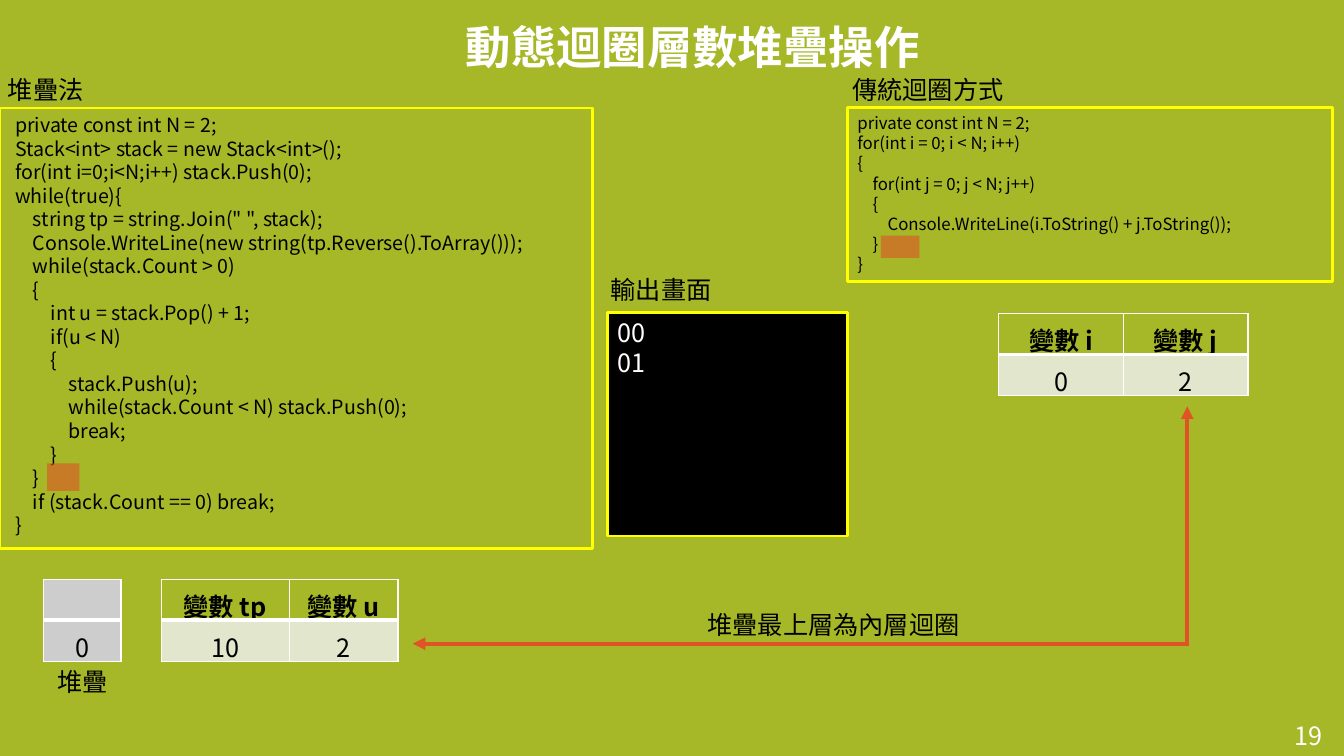
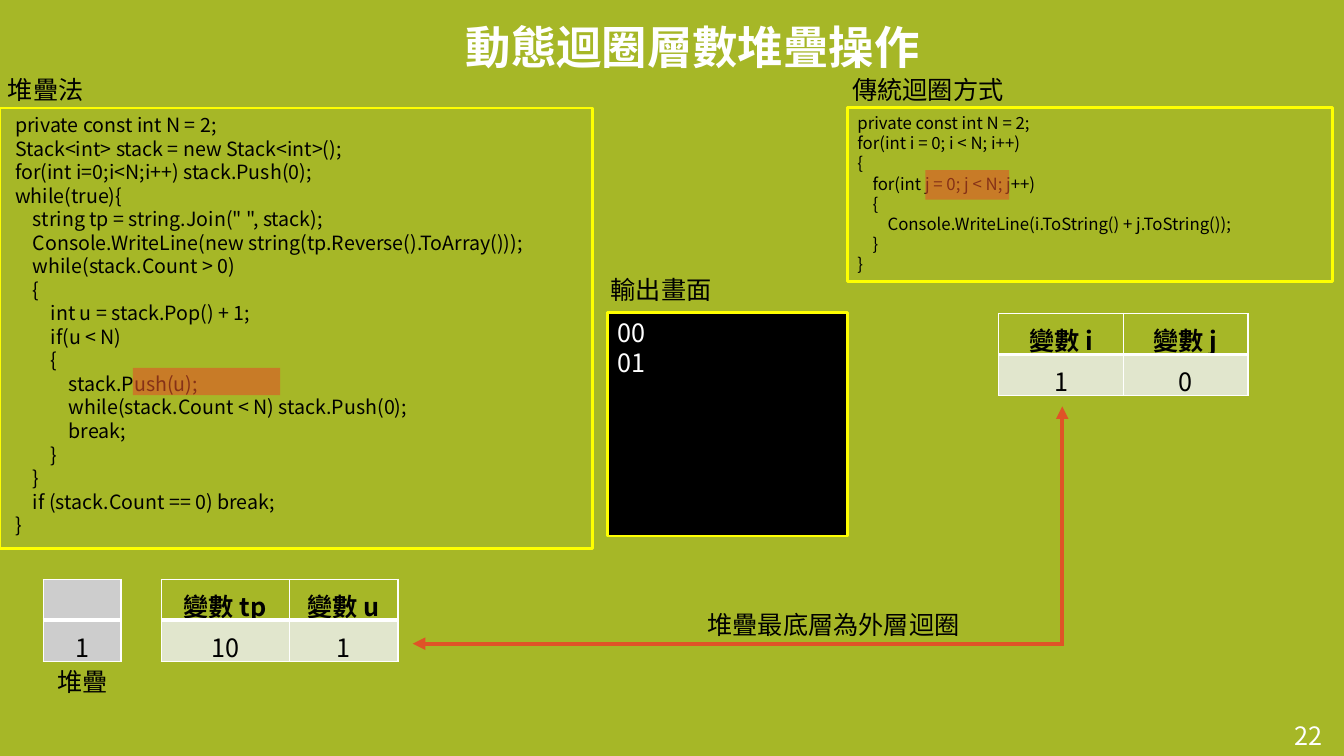
from lxml import etree
from pptx import Presentation
from pptx.dml.color import RGBColor
from pptx.enum.shapes import MSO_CONNECTOR, MSO_SHAPE
from pptx.enum.text import MSO_ANCHOR, MSO_AUTO_SIZE, PP_ALIGN
from pptx.oxml.ns import qn
from pptx.util import Cm, Pt

RECT = MSO_SHAPE.RECTANGLE
STRAIGHT = MSO_CONNECTOR.STRAIGHT
LEFT, CENTER, RIGHT = PP_ALIGN.LEFT, PP_ALIGN.CENTER, PP_ALIGN.RIGHT
TOP, MIDDLE, BOTTOM = MSO_ANCHOR.TOP, MSO_ANCHOR.MIDDLE, MSO_ANCHOR.BOTTOM
NO_AUTOFIT = MSO_AUTO_SIZE.NONE

STACK_CODE = """private const int N = 2;
Stack<int> stack = new Stack<int>();
for(int i=0;i<N;i++) stack.Push(0);
while(true){
    string tp = string.Join(" ", stack);
    Console.WriteLine(new string(tp.Reverse().ToArray()));
    while(stack.Count > 0)
    {
        int u = stack.Pop() + 1;
        if(u < N)
        {
            stack.Push(u);
            while(stack.Count < N) stack.Push(0);
            break;
        }
    }
    if (stack.Count == 0) break;
}"""

LOOP_CODE = """private const int N = 2;
for(int i = 0; i < N; i++)
{
    for(int j = 0; j < N; j++)
    {
        Console.WriteLine(i.ToString() + j.ToString());
    }
}"""

STEPS = [
    dict(number="19", stack="0", i="0", j="2", tp="10", u="2",
         note="堆疊最上層為內層迴圈", corner=29.92,
         marks=[(1.19, 11.68, 0.81, 0.69), (22.2, 5.94, 0.97, 0.56)]),
    dict(number="22", stack="1", i="1", j="0", tp="10", u="1",
         note="堆疊最底層為外層迴圈", corner=26.77,
         marks=[(3.35, 9.27, 3.71, 0.69), (23.32, 4.29, 2.11, 0.74)]),
]


def rgb(value):
    return RGBColor.from_string(value)


def write(tf, text, size=18, font="Noto Sans CJK SC", color="000000", bold=False,
          align=LEFT, anchor=TOP, spacing=None, indent=None):
    tf.word_wrap = True
    tf.vertical_anchor = anchor
    for n, line in enumerate(text.split("\n")):
        p = tf.paragraphs[0] if n == 0 else tf.add_paragraph()
        p.alignment = align
        p.space_before = Pt(0)
        if spacing:
            p.line_spacing = spacing
        if indent:
            level = (len(line) - len(line.lstrip())) // 4
            pPr = p._p.get_or_add_pPr()
            pPr.set("marL", str(Cm(indent * level)))
            pPr.set("indent", "0")
            etree.SubElement(pPr, qn("a:buNone"))
        r = p.add_run()
        r.text = line.lstrip()
        r.font.size = Pt(size)
        r.font.bold = bold
        r.font.color.rgb = rgb(color)
        r.font.name = font
        etree.SubElement(r._r.get_or_add_rPr(), qn("a:ea"), typeface="Noto Sans CJK SC")


class Deck:
    GREEN, PALE, GRAY = "A6B727", "E1E6CD", "CDCDCD"
    YELLOW, ORANGE, WHITE, BLACK = "FFFF00", "DF5327", "FFFFFF", "000000"

    def __init__(self):
        self.prs = Presentation()
        self.prs.slide_width, self.prs.slide_height = Cm(33.87), Cm(19.05)
        fill = self.prs.slide_master.background.fill
        fill.solid()
        fill.fore_color.rgb = rgb(self.GREEN)
        self.s = None

    def slide(self, title, number):
        self.s = self.prs.slides.add_slide(self.prs.slide_layouts[1])
        sp = self.place(self.s.shapes.title, 11.18, 0.36, 12.55, 1.63)
        write(sp.text_frame, title, size=32.4, font="Calibri", color=self.WHITE,
              bold=True, align=CENTER, anchor=BOTTOM, spacing=0.85)
        self.label(number, 31.67, 18.03, 1.9, color=self.WHITE, align=RIGHT, anchor=MIDDLE)

    def place(self, sp, x, y, w, h):
        sp.left, sp.top, sp.width, sp.height = Cm(x), Cm(y), Cm(w), Cm(h)
        sp.text_frame.auto_size = NO_AUTOFIT
        return sp

    def outline(self, sp):
        sp.line.color.rgb = rgb(self.YELLOW)
        sp.line.width = Pt(2)

    def code_list(self, text, x, y, w, h):
        sp = self.place(self.s.placeholders[1], x, y, w, h)
        self.outline(sp)
        sp.text_frame.margin_left = Cm(0.38)
        write(sp.text_frame, text, size=14, indent=0.45)

    def box(self, text, x, y, w, h, fill=None, **fmt):
        sp = self.s.shapes.add_shape(RECT, Cm(x), Cm(y), Cm(w), Cm(h))
        sp.shadow.inherit = False
        self.outline(sp)
        if fill:
            sp.fill.solid()
            sp.fill.fore_color.rgb = rgb(fill)
        else:
            sp.fill.background()
        write(sp.text_frame, text, **fmt)

    def highlight(self, x, y, w, h):
        sp = self.s.shapes.add_shape(RECT, Cm(x), Cm(y), Cm(w), Cm(h))
        sp.shadow.inherit = False
        sp.line.fill.background()
        sp.fill.solid()
        sp.fill.fore_color.rgb = rgb(self.ORANGE)
        color = sp._element.spPr.find(qn("a:solidFill"))[0]
        etree.SubElement(color, qn("a:alpha"), val="60000")

    def label(self, text, x, y, w, **fmt):
        sp = self.s.shapes.add_textbox(Cm(x), Cm(y), Cm(w), Cm(1))
        write(sp.text_frame, text, **fmt)

    def borders(self, cell, **widths):
        tcPr = cell._tc.get_or_add_tcPr()
        for side in "LRTB":
            ln = etree.SubElement(tcPr, qn(f"a:ln{side}"), w=str(Pt(widths.get(side, 1))))
            fill = etree.SubElement(ln, qn("a:solidFill"))
            etree.SubElement(fill, qn("a:srgbClr"), val=self.WHITE)

    def table(self, rows, x, y, widths, fills):
        height = 1.03
        frame = self.s.shapes.add_table(len(rows), len(widths), Cm(x), Cm(y),
                                        Cm(sum(widths)), Cm(height * len(rows)))
        table = frame.table
        table.first_row = table.horz_banding = False
        for column, width in zip(table.columns, widths):
            column.width = Cm(width)
        for n, row in enumerate(rows):
            table.rows[n].height = Cm(height)
            for m, text in enumerate(row):
                cell = table.cell(n, m)
                self.borders(cell, **({"B": 3} if n == 0 else {"T": 3}))
                cell.fill.solid()
                cell.fill.fore_color.rgb = rgb(fills[n])
                cell.margin_top, cell.margin_bottom = Cm(0.2), Cm(0)
                write(cell.text_frame, text, bold=n == 0, align=CENTER)

    def arrow(self, x1, y1, x2, y2):
        c = self.s.shapes.add_connector(STRAIGHT, Cm(x1), Cm(y1), Cm(x2), Cm(y2))
        c.line.color.rgb = rgb(self.ORANGE)
        c.line.width = Pt(3)
        ln = c.line._get_or_add_ln()
        ln.set("cap", "sq")
        etree.SubElement(ln, qn("a:tailEnd"), type="triangle")
        etree.SubElement(c._element.spPr, qn("a:effectLst"))


def build_step(deck, step):
    deck.slide("動態迴圈層數堆疊操作", step["number"])

    deck.label("堆疊法", -0.05, 1.74, 3.2)
    deck.code_list(STACK_CODE, 0, 2.72, 14.94, 11.1)
    deck.label("傳統迴圈方式", 21.23, 1.74, 4.52)
    deck.box(LOOP_CODE, 21.36, 2.72, 12.22, 4.37, size=12, indent=0.38)
    deck.label("輸出畫面", 15.14, 6.78, 4)
    deck.box("00\n01", 15.32, 7.87, 6.05, 5.64, fill=deck.BLACK, color=deck.WHITE)

    deck.table([[""], [step["stack"]]], 1.09, 14.6, [1.96], [deck.GRAY, deck.GRAY])
    deck.label("堆疊", 1.19, 16.66, 1.96)
    fills = [deck.GREEN, deck.PALE]
    deck.table([["變數 tp", "變數 u"], [step["tp"], step["u"]]], 4.06, 14.6, [3.23, 2.74], fills)
    deck.table([["變數 i", "變數 j"], [step["i"], step["j"]]], 25.17, 7.9, [3.14, 3.14], fills)

    for mark in step["marks"]:
        deck.highlight(*mark)

    corner, base = step["corner"], 16.22
    deck.arrow(corner, base, 10.4, base)
    deck.arrow(corner, base, corner, 10.24)
    deck.label(step["note"], 17.58, 15.24, 7.04)


def main():
    deck = Deck()
    for step in STEPS:
        build_step(deck, step)
    deck.prs.save("out.pptx")


if __name__ == "__main__":
    main()
